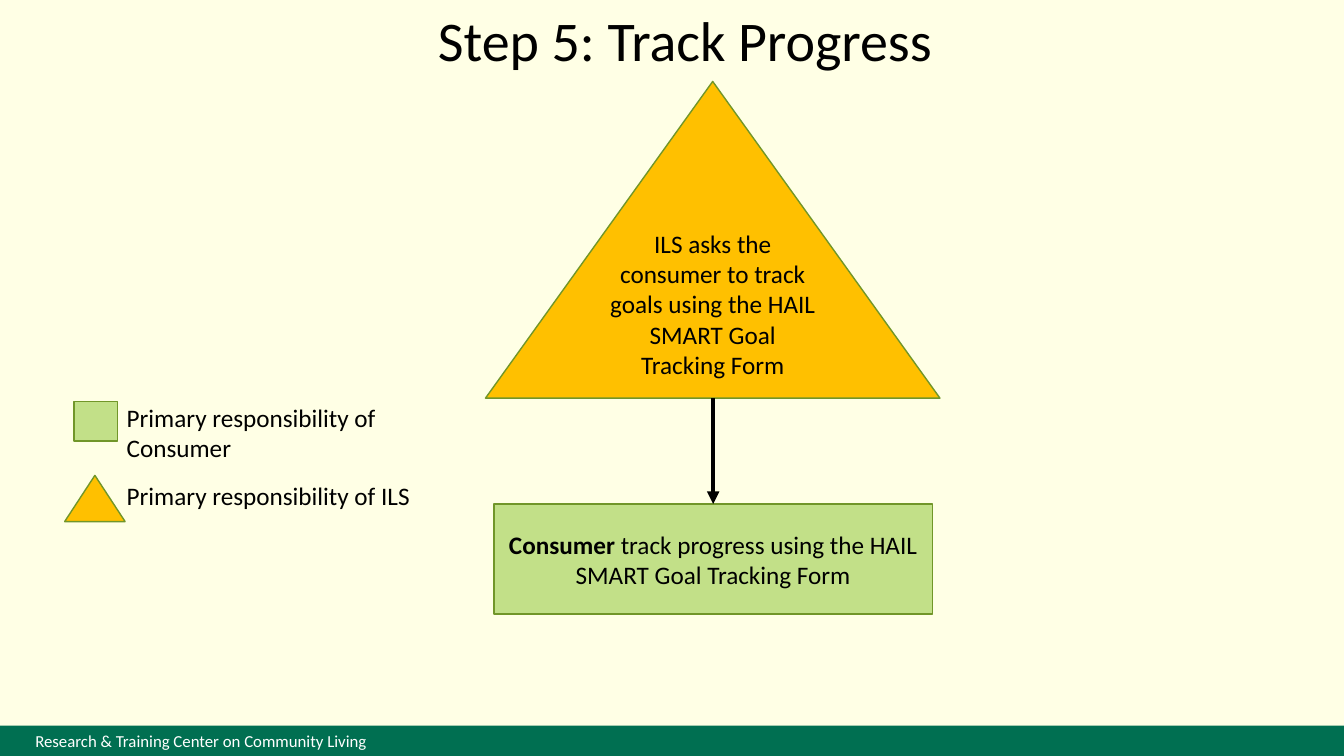
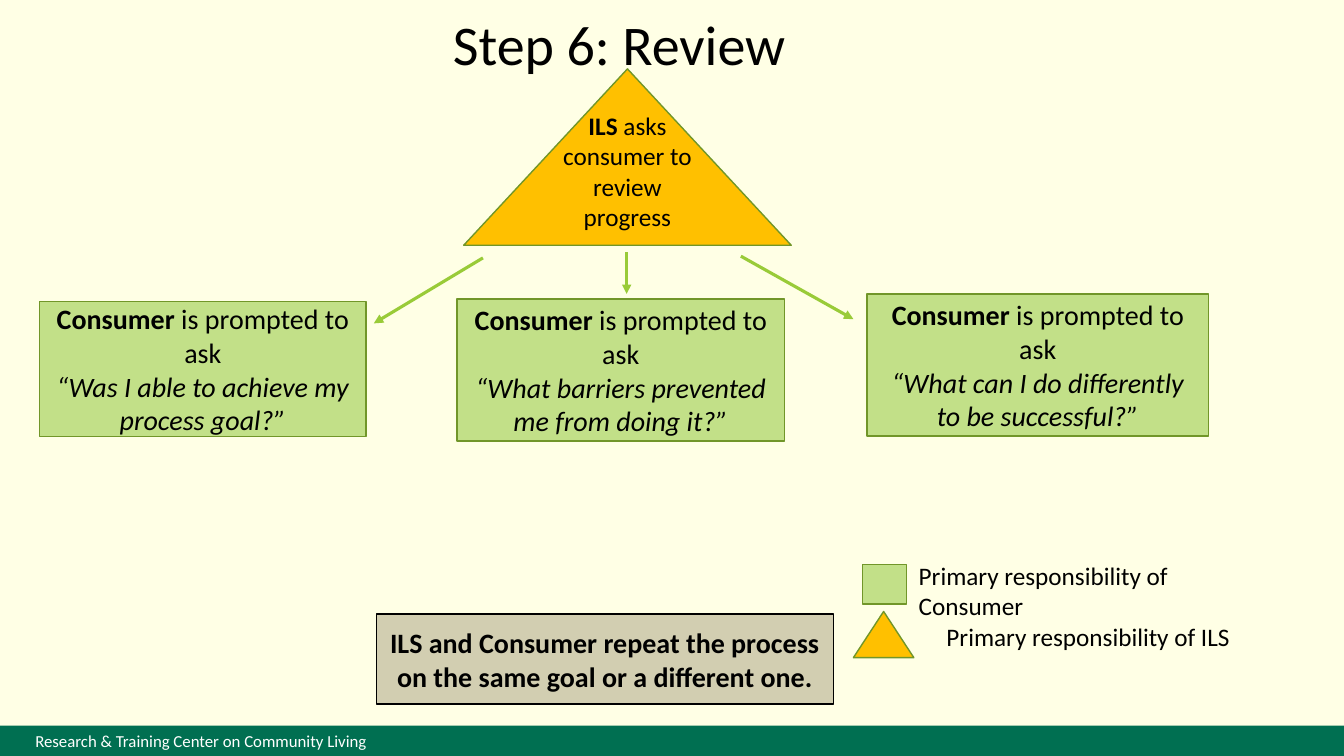
from typing import NamedTuple

from lxml import etree
from pptx import Presentation
from pptx import util as u
from pptx.dml import color as dml
from pptx.enum import shapes as es
from pptx.enum import text as et
from pptx.oxml import ns

# Grid: 160 columns by 90 rows of square cells
COLS, ROWS = 160, 90
CELL = u.Inches(7.5) // ROWS

# Shared look
FONT = "Calibri"
PAGE, BAND, INK, WHITE = "FFFFE5", "006F51", "000000", "FFFFFF"
GREEN, GOLD, SAND = "C2E088", "FFC000", "D2CEB1"
EDGE, ARROW = "719629", "99CB38"
RECT = es.MSO_SHAPE.RECTANGLE
TRI = es.MSO_SHAPE.ISOSCELES_TRIANGLE
LEFT, MID = et.PP_ALIGN.LEFT, et.PP_ALIGN.CENTER


class Run(NamedTuple):
    text: str
    bold: bool = False
    ital: bool = False


class Box(NamedTuple):
    x: float
    y: float
    w: float
    h: float


class Line(NamedTuple):
    x1: float
    y1: float
    x2: float
    y2: float


class Ask(NamedTuple):
    box: Box
    quote: str


class Key(NamedTuple):
    form: int
    fill: str
    mark: Box
    text: Box
    label: str


def grid(*cells: float) -> list[u.Emu]:
    return [u.Emu(round(n * CELL)) for n in cells]


def rgb(code: str) -> dml.RGBColor:
    return dml.RGBColor.from_string(code)


def write(shape, *paras, size=18, color=INK, align=MID, bold=False,
          anchor=et.MSO_ANCHOR.MIDDLE, inset=0.0) -> None:
    """Fill a shape with paragraphs, each a string or a list of runs."""
    frame = shape.text_frame
    frame.word_wrap = True
    frame.auto_size = et.MSO_AUTO_SIZE.NONE
    frame.vertical_anchor = anchor
    frame.margin_bottom = u.Inches(0.05 + inset)
    for i, runs in enumerate(paras):
        para = frame.add_paragraph() if i else frame.paragraphs[0]
        para.alignment = align
        for part in [Run(runs, bold)] if isinstance(runs, str) else runs:
            run = para.add_run()
            run.text = part.text
            font = run.font
            font.name, font.size = FONT, u.Pt(size)
            font.bold, font.italic = part.bold, part.ital
            font.color.rgb = rgb(color)


def draw(slide, form: int, box: Box, fill: str, edge: str = EDGE):
    shape = slide.shapes.add_shape(form, *grid(*box))
    shape.shadow.inherit = False
    shape.fill.solid()
    shape.fill.fore_color.rgb = rgb(fill)
    if edge:
        shape.line.color.rgb = rgb(edge)
        shape.line.width = u.Pt(1)
    else:
        shape.line.fill.background()
    return shape


def link(slide, line: Line, color: str = ARROW, width: float = 2.25):
    conn = slide.shapes.add_connector(es.MSO_CONNECTOR.STRAIGHT, *grid(*line))
    conn.line.color.rgb = rgb(color)
    conn.line.width = u.Pt(width)
    stroke = conn.element.xpath(".//a:ln")[0]
    etree.SubElement(stroke, ns.qn("a:tailEnd"), type="triangle")
    etree.SubElement(stroke.getparent(), ns.qn("a:effectLst"))
    return conn


def legend(slide, keys: list[Key]) -> None:
    for key in keys:
        draw(slide, key.form, key.mark, key.fill)
        note = slide.shapes.add_textbox(*grid(*key.text))
        write(note, key.label, align=LEFT, anchor=et.MSO_ANCHOR.TOP)


def keys(square: tuple, peak: tuple, first: tuple, second: tuple) -> list[Key]:
    """Legend entries from the top left corners of marks and labels."""
    return [
        Key(RECT, GREEN, Box(*square, 5.2, 4.7), Box(*first, 42.2, 4.8),
            "Primary responsibility of Consumer"),
        Key(TRI, GOLD, Box(*peak, 7.2, 5.5), Box(*second, 42.2, 4.8),
            "Primary responsibility of ILS"),
    ]


def start(deck, title: str, box: Box):
    slide = deck.slides.add_slide(deck.slide_layouts[5])
    head = slide.shapes.title
    head.left, head.top, head.width, head.height = grid(*box)
    write(head, title, size=40)
    return slide


def footer(deck, slide) -> None:
    """Draw the band and move it to the layout, so every slide shows it."""
    band = draw(slide, RECT, Box(0, 86.4, COLS, 3.6), BAND, edge="")
    write(band, "Research & Training Center on Community Living",
          size=12, color=WHITE, align=LEFT)
    band.text_frame.margin_left = u.Inches(0.35)
    band.element.xpath(".//p:cNvPr")[0].set("id", "99")
    deck.slide_layouts[5].shapes.element.append(band.element)


def track(deck) -> None:
    slide = start(deck, "Step 5: Track Progress", Box(42.5, 0, 78.1, 9.2))
    footer(deck, slide)

    # Request and answer
    peak = draw(slide, TRI, Box(57.8, 9.7, 54.1, 37.7), GOLD)
    write(peak, "ILS asks the consumer to track goals using the HAIL "
                "SMART Goal Tracking Form", inset=0.3)
    goal = draw(slide, RECT, Box(58.8, 60, 52.2, 13.1), GREEN)
    write(goal, [Run("Consumer ", bold=True),
                 Run("track progress using the HAIL SMART Goal Tracking Form")])
    conn = link(slide, Line(84.9, 47.4, 84.9, 60), INK, 3)
    conn.end_connect(goal, 0)

    legend(slide, keys((8.8, 47.8), (7.7, 56.6), (13.9, 47.3), (13.9, 56.6)))


def review(deck) -> None:
    slide = start(deck, "Step 6: Review", Box(46.7, 0.5, 54, 9.2))

    # Request
    peak = draw(slide, TRI, Box(55.2, 8.2, 39, 21), GOLD)
    write(peak, [Run("ILS ", bold=True),
                 Run("asks consumer to review progress")], inset=0.6)

    # Questions
    for ask in (
        Ask(Box(4.7, 35.9, 38.9, 16.1),
            "“Was I able to achieve my process goal?”"),
        Ask(Box(54.4, 35.6, 39, 16.9),
            "“What barriers prevented me from doing it?”"),
        Ask(Box(103.2, 35, 40.7, 16.9),
            "“What can I do differently to be successful?”"),
    ):
        card = draw(slide, RECT, ask.box, GREEN)
        write(card, [Run("Consumer ", bold=True), Run("is prompted to ask")],
              [Run(ask.quote, ital=True)], size=20)
    for line in (Line(57.5, 30.7, 44.5, 38.5), Line(74.6, 30, 74.6, 35),
                 Line(88.2, 30.5, 101.6, 38)):
        link(slide, line)

    # Next round
    loop = draw(slide, RECT, Box(44.8, 73.1, 54.4, 10.7), SAND, INK)
    write(loop, "ILS and Consumer repeat the process on the same goal "
                "or a different one.", size=20, bold=True)

    legend(slide, keys((102.7, 67.2), (101.6, 72.8),
                       (108.2, 66.1), (111.5, 73.4)))


def main() -> None:
    deck = Presentation()
    deck.slide_width, deck.slide_height = grid(COLS, ROWS)
    back = deck.slide_master.background.fill
    back.solid()
    back.fore_color.rgb = rgb(PAGE)
    track(deck)
    review(deck)
    deck.save("out.pptx")


if __name__ == "__main__":
    main()
